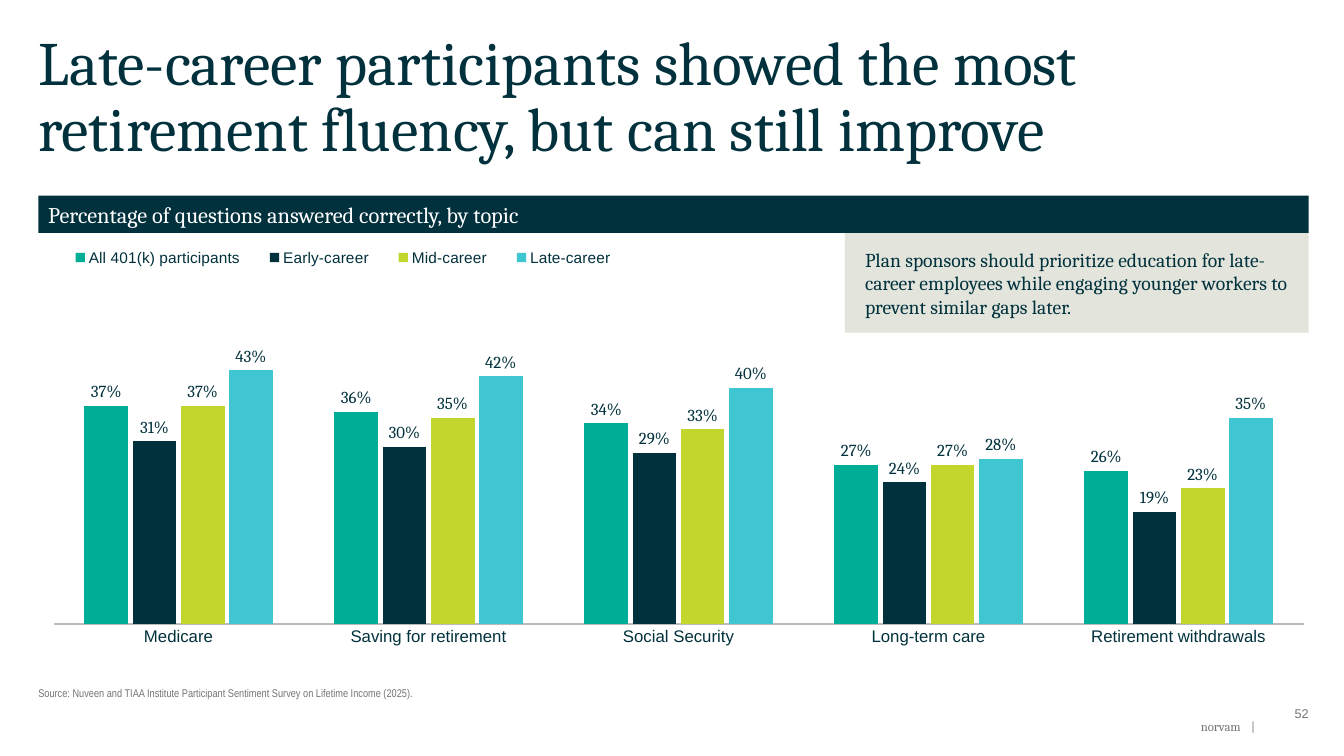
"""Build the slide on retirement fluency by career stage."""
from lxml import etree
from pptx import Presentation
from pptx.chart.data import CategoryChartData
from pptx.dml.color import RGBColor
from pptx.enum.chart import XL_CHART_TYPE, XL_LABEL_POSITION, XL_LEGEND_POSITION, XL_TICK_LABEL_POSITION, XL_TICK_MARK
from pptx.enum.shapes import MSO_SHAPE
from pptx.enum.text import MSO_ANCHOR, MSO_AUTO_SIZE, PP_ALIGN
from pptx.oxml import parse_xml
from pptx.oxml.ns import nsdecls, qn
from pptx.util import Inches, Pt

TITLE = "Late-career participants showed the most retirement fluency, but can still improve"
BAND = "Percentage of questions answered correctly, by topic"
CALLOUT = ("Plan sponsors should prioritize education for late-career employees "
           "while engaging younger workers to prevent similar gaps later.")
SOURCE = "Source: Nuveen and TIAA Institute Participant Sentiment Survey on Lifetime Income (2025)."
FOOTER = "\tnorvam\t|"
PAGE = "52"

NAVY = RGBColor(0x00, 0x31, 0x3C)
TEAL = RGBColor(0x00, 0xAD, 0x97)
LIME = RGBColor(0xC3, 0xD6, 0x2E)
SKY = RGBColor(0x40, 0xC5, 0xD3)
SAND = RGBColor(0xE3, 0xE5, 0xDC)
GREY = RGBColor(0x74, 0x74, 0x76)
RULE = RGBColor(0xBA, 0xBC, 0xBC)
WHITE = RGBColor(0xFF, 0xFF, 0xFF)

TOPICS = ["Medicare", "Saving for retirement", "Social Security", "Long-term care", "Retirement withdrawals"]
GROUPS = [
    ("All 401(k) participants", TEAL, (0.37, 0.36, 0.34, 0.27, 0.26)),
    ("Early-career", NAVY, (0.31, 0.30, 0.29, 0.24, 0.19)),
    ("Mid-career", LIME, (0.37, 0.35, 0.33, 0.27, 0.23)),
    ("Late-career", SKY, (0.43, 0.42, 0.40, 0.28, 0.35)),
]

SERIF, SANS, NARROW = "Cambria", "Arial", "Arial Narrow"
TOP, MIDDLE, BOTTOM = MSO_ANCHOR.TOP, MSO_ANCHOR.MIDDLE, MSO_ANCHOR.BOTTOM
LEFT, RIGHT = PP_ALIGN.LEFT, PP_ALIGN.RIGHT
NO_TICK = XL_TICK_MARK.NONE

SLIDE_W, SLIDE_H = 13.33, 7.5
MARGIN = 0.38
WIDTH = 12.6
EDGE = MARGIN + WIDTH
BAND_TOP, BAND_H = 1.94, 0.37
CALLOUT_W, CALLOUT_H = 4.6, 0.99
CHART_TOP, SOURCE_TOP, SOURCE_H = 2.41, 6.54, 0.4
FOOTER_W, PAGE_W = 0.81, 0.34
TABS = (0.66, 0.8)


def style(font, size, color=NAVY, name=SERIF):
    """Set the size, colour and typeface of a font."""
    font.size, font.name, font.bold = Pt(size), name, False
    font.color.rgb = color


def write(s, text, size, color=NAVY, name=SERIF, align=LEFT, anchor=TOP, inset=0, spacing=1.0, tabs=()):
    """Put one formatted paragraph into a shape."""
    tf = s.text_frame
    tf.word_wrap, tf.auto_size, tf.vertical_anchor = True, MSO_AUTO_SIZE.NONE, anchor
    tf.margin_left = tf.margin_top = tf.margin_right = tf.margin_bottom = Inches(inset)
    p = tf.paragraphs[0]
    pPr = p._p.get_or_add_pPr()
    pPr.set("marL", "0")
    pPr.set("indent", "0")
    etree.SubElement(pPr, qn("a:buNone"))
    if tabs:
        stops = etree.SubElement(pPr, qn("a:tabLst"))
        for pos in tabs:
            etree.SubElement(stops, qn("a:tab"), pos=str(Inches(pos)), algn="r")
    p.alignment, p.line_spacing, p.space_before = align, spacing, Pt(0)
    r = p.add_run()
    r.text = text
    style(r.font, size, color, name)


def place(s, x, y, w, h):
    """Move and size a shape in inches."""
    s.left, s.top, s.width, s.height = (Inches(v) for v in (x, y, w, h))
    return s


def panel(shapes, x, y, w, h, fill):
    """Add a plain filled rectangle."""
    s = shapes.add_shape(MSO_SHAPE.RECTANGLE, Inches(x), Inches(y), Inches(w), Inches(h))
    s.shadow.inherit = False
    s.fill.solid()
    s.fill.fore_color.rgb = fill
    s.line.fill.background()
    return s


def layout(x, y, w, h, inner=False):
    """Return a manual chart layout given as shares of the chart."""
    target = '<c:layoutTarget val="inner"/>' if inner else ""
    sizes = "".join(f'<c:{k} val="{v}"/>' for k, v in zip("xywh", (x, y, w, h)))
    return parse_xml(f'<c:layout {nsdecls("c")}><c:manualLayout>{target}<c:xMode val="edge"/>'
                     f'<c:yMode val="edge"/>{sizes}</c:manualLayout></c:layout>')


def add_scores(shapes):
    """Add the clustered column chart."""
    data = CategoryChartData(number_format="0%")
    data.categories = TOPICS
    for name, _, values in GROUPS:
        data.add_series(name, values)
    chart = shapes.add_chart(XL_CHART_TYPE.COLUMN_CLUSTERED, Inches(MARGIN), Inches(CHART_TOP),
                             Inches(WIDTH), Inches(SOURCE_TOP - CHART_TOP), data).chart
    style(chart.font, 16)
    chart.has_title = False
    chart.has_legend = True
    legend = chart.legend
    legend.position, legend.include_in_layout = XL_LEGEND_POSITION.TOP, False
    style(legend.font, 11, name=SANS)
    legend._element.find(qn("c:legendPos")).addnext(layout(0.01, 0, 0.46, 0.07))

    plot = chart.plots[0]
    plot.gap_width, plot.overlap, plot.vary_by_categories = 141, -10, False
    for series, (_, color, _) in zip(plot.series, GROUPS):
        series.format.fill.solid()
        series.format.fill.fore_color.rgb = color
        labels = series.data_labels
        labels.show_value, labels.position = True, XL_LABEL_POSITION.OUTSIDE_END
        labels.number_format, labels.number_format_is_linked = "0%", False
        style(labels.font, 12)

    topics, scale = chart.category_axis, chart.value_axis
    for axis in (topics, scale):
        axis.major_tick_mark = axis.minor_tick_mark = NO_TICK
        axis.has_major_gridlines = False
    style(topics.tick_labels.font, 12, name=SANS)
    topics.format.line.color.rgb = RULE
    topics.format.line.width = Pt(1)
    scale.minimum_scale, scale.maximum_scale = 0, 0.6
    scale.tick_label_position = XL_TICK_LABEL_POSITION.NONE
    scale.format.line.fill.background()

    area = chart._chartSpace.chart.plotArea
    for old in area.findall(qn("c:layout")):
        area.remove(old)
    area.insert(0, layout(0.012, 0.065, 0.984, 0.851, inner=True))


def main():
    """Build and save the slide."""
    prs = Presentation()
    prs.slide_width, prs.slide_height = Inches(SLIDE_W), Inches(SLIDE_H)
    slide = prs.slides.add_slide(prs.slide_layouts[1])
    shapes = slide.shapes

    write(place(shapes.title, MARGIN, 0.32, WIDTH, 1.34), TITLE, 44, spacing=0.9)
    write(place(slide.placeholders[1], MARGIN, SOURCE_TOP, WIDTH, SOURCE_H),
          SOURCE, 8, GREY, NARROW, anchor=BOTTOM)
    add_scores(shapes)
    write(panel(shapes, EDGE - CALLOUT_W, BAND_TOP + BAND_H, CALLOUT_W, CALLOUT_H, SAND),
          CALLOUT, 14, anchor=MIDDLE, inset=0.2)
    write(panel(shapes, MARGIN, BAND_TOP, WIDTH, BAND_H, NAVY), BAND, 16, WHITE, anchor=MIDDLE, inset=0.1)

    footer = shapes.add_textbox(Inches(11.91), Inches(6.98), Inches(FOOTER_W), Inches(0.2))
    write(footer, FOOTER, 9, GREY, tabs=TABS)
    page = shapes.add_textbox(Inches(EDGE - PAGE_W), Inches(7), Inches(PAGE_W), Inches(0.4))
    write(page, PAGE, 9, GREY, SANS, align=RIGHT)
    prs.save("out.pptx")


if __name__ == "__main__":
    main()
